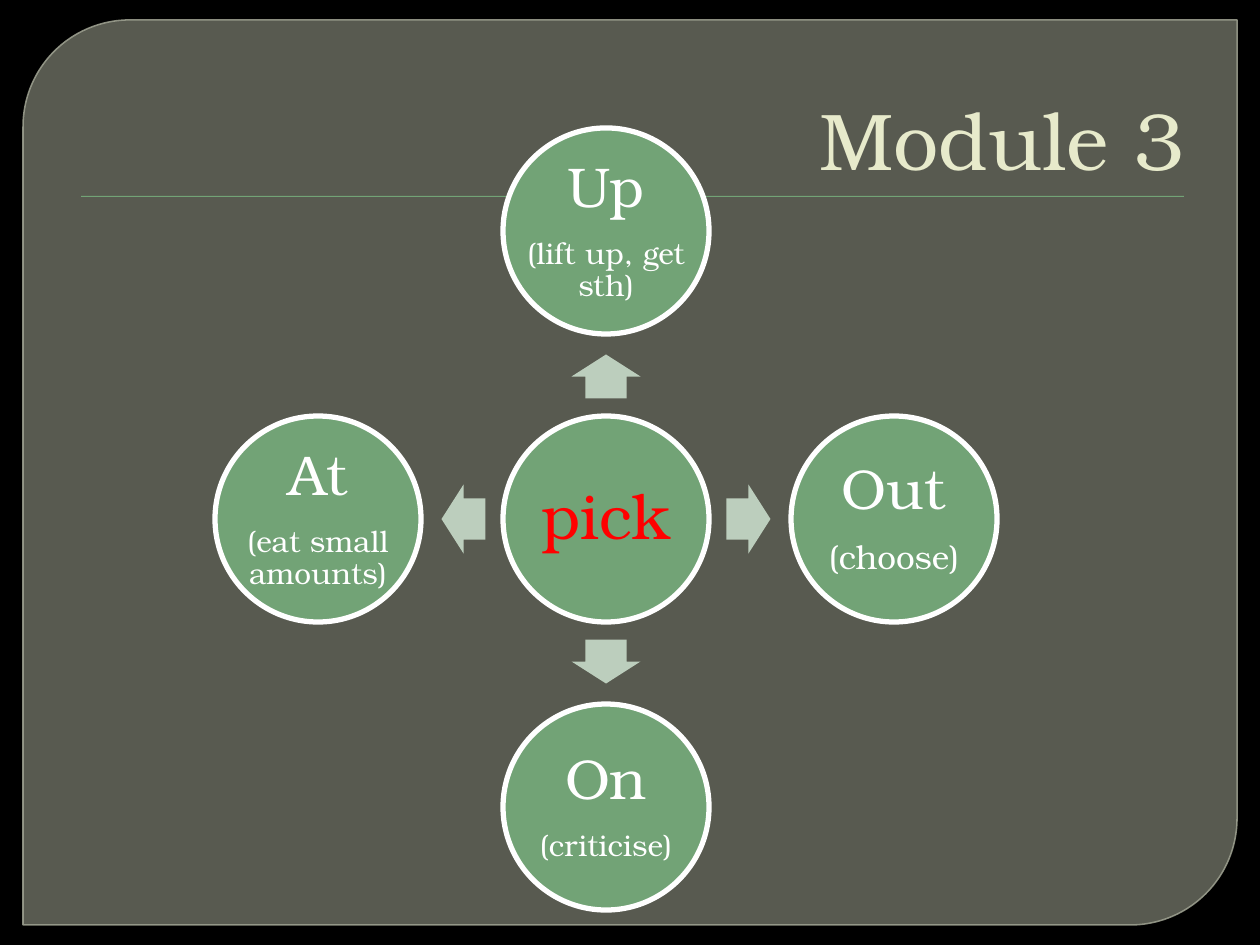
from pptx import Presentation
from pptx.dml.color import RGBColor
from pptx.enum.shapes import MSO_SHAPE
from pptx.enum.text import MSO_ANCHOR, PP_ALIGN
from pptx.oxml.ns import qn
from pptx.util import Pt
from lxml import etree

EMU_PER_PX = 914400 / 126
FONT = "TeX Gyre Bonum"
GREEN, PALE_GREEN, WHITE = "72A376", "BCCEBD", "FFFFFF"


def px(length):
    return round(length * EMU_PER_PX)


def color(value):
    return RGBColor.from_string(value)


def set_alpha(fill, percent):
    """Make a solid fill, or the fill of a line, partly transparent."""
    tint = fill._xPr.find(qn("a:solidFill"))[0]
    etree.SubElement(tint, qn("a:alpha"), val=str(percent * 1000))


def add_plain_shape(page, kind, box, fill, line=None, width=0):
    shape = page.shapes.add_shape(kind, *map(px, box))
    shape.shadow.inherit = False
    shape.fill.solid()
    shape.fill.fore_color.rgb = color(fill)
    if line:
        shape.line.color.rgb = color(line)
        shape.line.width = Pt(width)
    else:
        shape.line.fill.background()
    return shape


def format_para(para, text, size, ink, align):
    para.text = text
    para.alignment = align
    para.font.name = FONT
    para.font.size = Pt(size)
    para.font.color.rgb = color(ink)


def add_panel(page, box):
    panel = add_plain_shape(page, MSO_SHAPE.ROUND_2_DIAG_RECTANGLE, box,
                            "888B7B", "9DA090", 0.87)
    panel.adjustments[0] = 0.118
    panel.adjustments[1] = 0
    set_alpha(panel.fill, 65)
    set_alpha(panel.line.fill, 88)


def add_heading(page, box, text):
    """Place the title above the panel, with a rule under it."""
    left, top, width, height = box
    add_plain_shape(page, MSO_SHAPE.RECTANGLE,
                    (left + 18, top + height + 3, width - 31, 1), GREEN)
    title = page.shapes.title
    page.shapes._spTree.append(title._element)
    title.left, title.top, title.width, title.height = map(px, box)
    title.text_frame.vertical_anchor = MSO_ANCHOR.BOTTOM
    format_para(title.text_frame.paragraphs[0], text, 46, "E7EACB", PP_ALIGN.RIGHT)


def add_circle(page, center_x, center_y, diameter, lines):
    """Lines are (text, size, colour) tuples."""
    box = (center_x - diameter / 2, center_y - diameter / 2, diameter, diameter)
    add_plain_shape(page, MSO_SHAPE.OVAL, box, GREEN, WHITE, 3)
    frame = page.shapes.add_textbox(*map(px, box)).text_frame
    frame.word_wrap = True
    frame.vertical_anchor = MSO_ANCHOR.MIDDLE
    frame.margin_left = frame.margin_right = px(5)
    frame.margin_top = frame.margin_bottom = px(5)
    for index, (text, size, ink) in enumerate(lines):
        para = frame.add_paragraph() if index else frame.paragraphs[0]
        format_para(para, text, size, ink, PP_ALIGN.CENTER)
        para.line_spacing = 0.9
        para.space_after = Pt(round(size * 0.35))


def add_arrow(page, center_x, center_y, rotation):
    length, breadth = 44, 69
    box = (center_x - length / 2, center_y - breadth / 2, length, breadth)
    arrow = add_plain_shape(page, MSO_SHAPE.RIGHT_ARROW, box, PALE_GREEN)
    arrow.adjustments[0] = 0.6
    arrow.adjustments[1] = 0.5
    arrow.rotation = rotation


def add_radial_diagram(page, box, hub, spokes):
    """Spokes are (x step, y step, rotation, word, meaning, meaning size)."""
    left, top, width, height = box
    diameter = 206
    center_x, center_y = left + width / 2, top + height / 2
    reach = (width - diameter) / 2
    add_circle(page, center_x, center_y, diameter, [(hub, 36, "FF0000")])
    for step_x, step_y, rotation, word, meaning, size in spokes:
        add_arrow(page, center_x + step_x * 142.5, center_y + step_y * 142.5, rotation)
        add_circle(page, center_x + step_x * reach, center_y + step_y * reach,
                   diameter, [(word, 32, WHITE), (meaning, size, WHITE)])


def main():
    deck = Presentation()
    deck.slide_width, deck.slide_height = px(1260), px(945)
    page = deck.slides.add_slide(deck.slide_layouts[5])
    page.background.fill.solid()
    page.background.fill.fore_color.rgb = color("000000")
    add_panel(page, (23, 20, 1214, 905))
    add_heading(page, (63, 35, 1134, 158), "Module 3")
    add_radial_diagram(page, (215, 128, 782, 782), "pick", [
        (0, -1, 270, "Up", "(lift up, get sth)", 17),
        (1, 0, 0, "Out", "(choose)", 19),
        (0, 1, 90, "On", "(criticise)", 17),
        (-1, 0, 180, "At", "(eat small amounts)", 17),
    ])
    deck.save("out.pptx")


if __name__ == "__main__":
    main()
